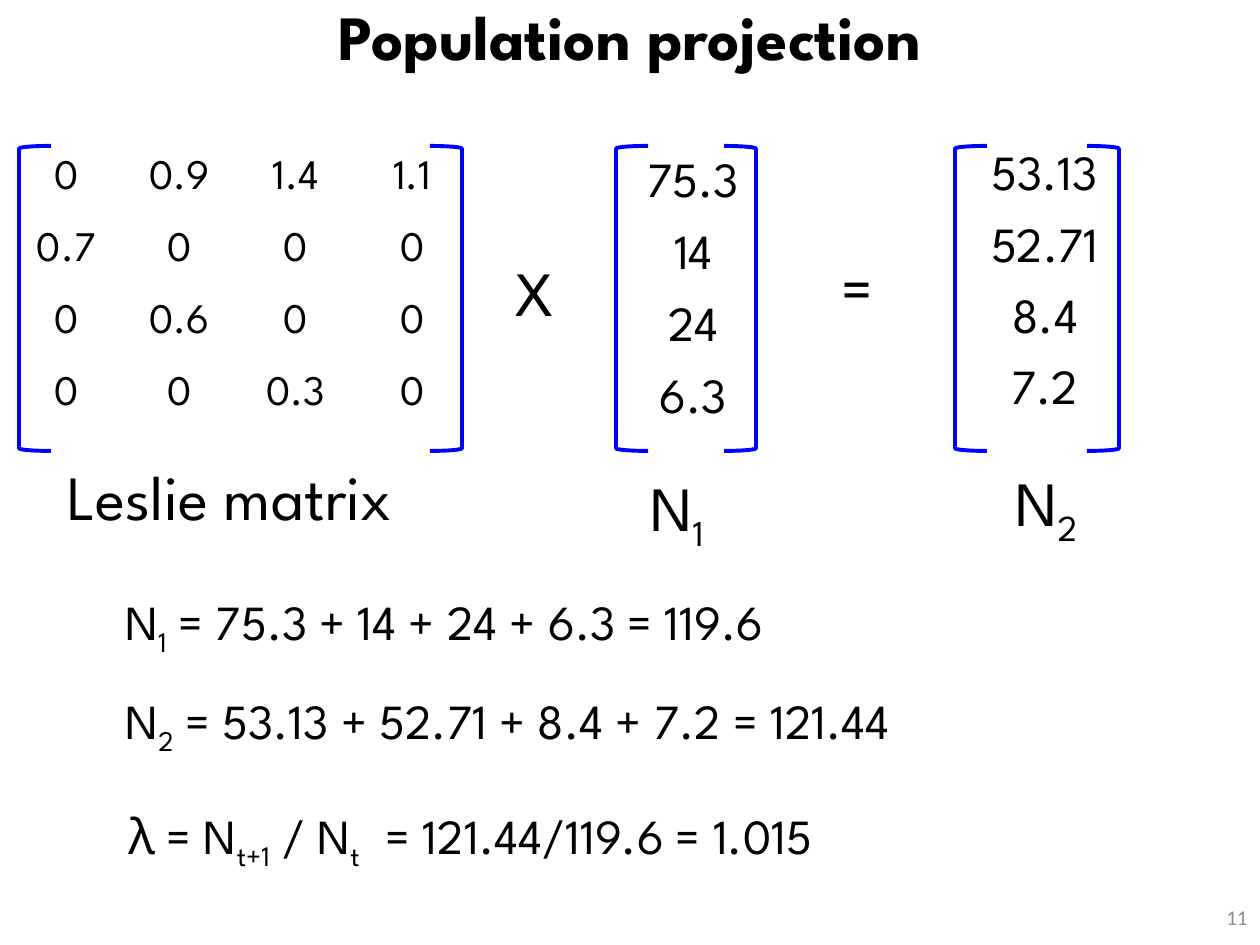
from pptx import Presentation
from pptx.dml.color import RGBColor
from pptx.enum.shapes import MSO_SHAPE
from pptx.enum.text import MSO_ANCHOR, MSO_AUTO_SIZE, PP_ALIGN
from pptx.util import Emu, Pt

PX = 914400 // 126
BLACK = RGBColor(0, 0, 0)
BLUE = RGBColor(0, 0, 255)
GREY = RGBColor(0x8C, 0x8C, 0x8C)
FONT = "League Spartan"
BRACKET_TOP, BRACKET_WIDTH, BRACKET_HEIGHT = 146, 32, 305

LESLIE = [
    ["0", "0.9", "1.4", "1.1"],
    ["0.7", "0", "0", "0"],
    ["0", "0.6", "0", "0"],
    ["0", "0", "0.3", "0"],
]
N1 = [["75.3"], ["14"], ["24"], ["6.3"]]
N2 = [["53.13"], ["52.71"], ["8.4"], ["7.2"]]

LABELS = [
    ((503, 247, 64, 89), 36, [("X", False)]),
    ((829, 242, 64, 89), 36, [("=", False)]),
    ((55, 451, 417, 89), 36, [("Leslie matrix", False)]),
    ((638, 462, 100, 89), 36, [("N", False), ("1", True)]),
    ((1003, 457, 100, 89), 36, [("N", False), ("2", True)]),
]
EQUATIONS = [
    ((113, 585, 780, 72), 28,
     [("N", False), ("1", True), (" = 75.3 + 14 + 24 + 6.3 = 119.6", False)]),
    ((113, 684, 927, 72), 28,
     [("N", False), ("2", True), (" = 53.13 + 52.71 + 8.4 + 7.2 = 121.44", False)]),
    ((116, 799, 848, 72), 28,
     [("λ = N", False), ("t+1", True), (" / N", False), ("t  ", True),
      (" = 121.44/119.6 = 1.015", False)]),
]


def px(*lengths):
    return [Emu(length * PX) for length in lengths]


def style(font, size, color=BLACK, name=FONT, bold=False):
    font.size = Pt(size)
    font.name = name
    font.bold = bold
    font.color.rgb = color


def add_framed_text(slide, box, text, align, size, **look):
    frame = slide.shapes.add_textbox(*px(*box)).text_frame
    frame.word_wrap = True
    frame.vertical_anchor = MSO_ANCHOR.MIDDLE
    frame.text = text
    line = frame.paragraphs[0]
    line.alignment = align
    style(line.runs[0].font, size, **look)
    return line


def add_formula(slide, box, size, parts):
    frame = slide.shapes.add_textbox(*px(*box)).text_frame
    frame.word_wrap = False
    frame.auto_size = MSO_AUTO_SIZE.SHAPE_TO_FIT_TEXT
    for text, subscript in parts:
        run = frame.paragraphs[0].add_run()
        run.text = text
        style(run.font, size)
        if subscript:
            run.font._element.set("baseline", "-25000")


def add_values(slide, left, top, widths, row_height, values, size):
    box = px(left, top, sum(widths), row_height * len(values))
    grid = slide.shapes.add_table(len(values), len(widths), *box).table
    grid.first_row = grid.horz_banding = False
    for column, width in zip(grid.columns, widths):
        column.width = Emu(width * PX)
    for r, row in enumerate(values):
        for c, value in enumerate(row):
            cell = grid.cell(r, c)
            cell.fill.background()
            cell.text = value
            entry = cell.text_frame.paragraphs[0]
            entry.alignment = PP_ALIGN.CENTER
            style(entry.runs[0].font, size)


def add_brackets(slide, left, right):
    sides = [(MSO_SHAPE.LEFT_BRACKET, left),
             (MSO_SHAPE.RIGHT_BRACKET, right - BRACKET_WIDTH)]
    for kind, x in sides:
        bracket = slide.shapes.add_shape(
            kind, *px(x, BRACKET_TOP, BRACKET_WIDTH, BRACKET_HEIGHT))
        bracket.shadow.inherit = False
        bracket.fill.background()
        bracket.line.color.rgb = BLUE
        bracket.line.width = Pt(2.25)


def main():
    deck = Presentation()
    deck.slide_width, deck.slide_height = px(1260, 945)
    slide = deck.slides.add_slide(deck.slide_layouts[6])

    title = add_framed_text(slide, (0, 1, 1260, 78), "Population projection",
                            PP_ALIGN.CENTER, 36, bold=True)
    title.line_spacing = 0.9

    add_values(slide, 10, 154, [113, 113, 120, 113], 72, LESLIE, 24)
    add_values(slide, 620, 157, [147], 72, N1, 28)
    add_values(slide, 966, 150, [158], 57, N2, 28)
    for left, right in [(19, 462), (616, 756), (955, 1119)]:
        add_brackets(slide, left, right)

    for box, size, parts in LABELS + EQUATIONS:
        add_formula(slide, box, size, parts)

    add_framed_text(slide, (976, 892, 284, 50), "11", PP_ALIGN.RIGHT, 12,
                    color=GREY, name="Calibri")
    deck.save("out.pptx")


if __name__ == "__main__":
    main()
